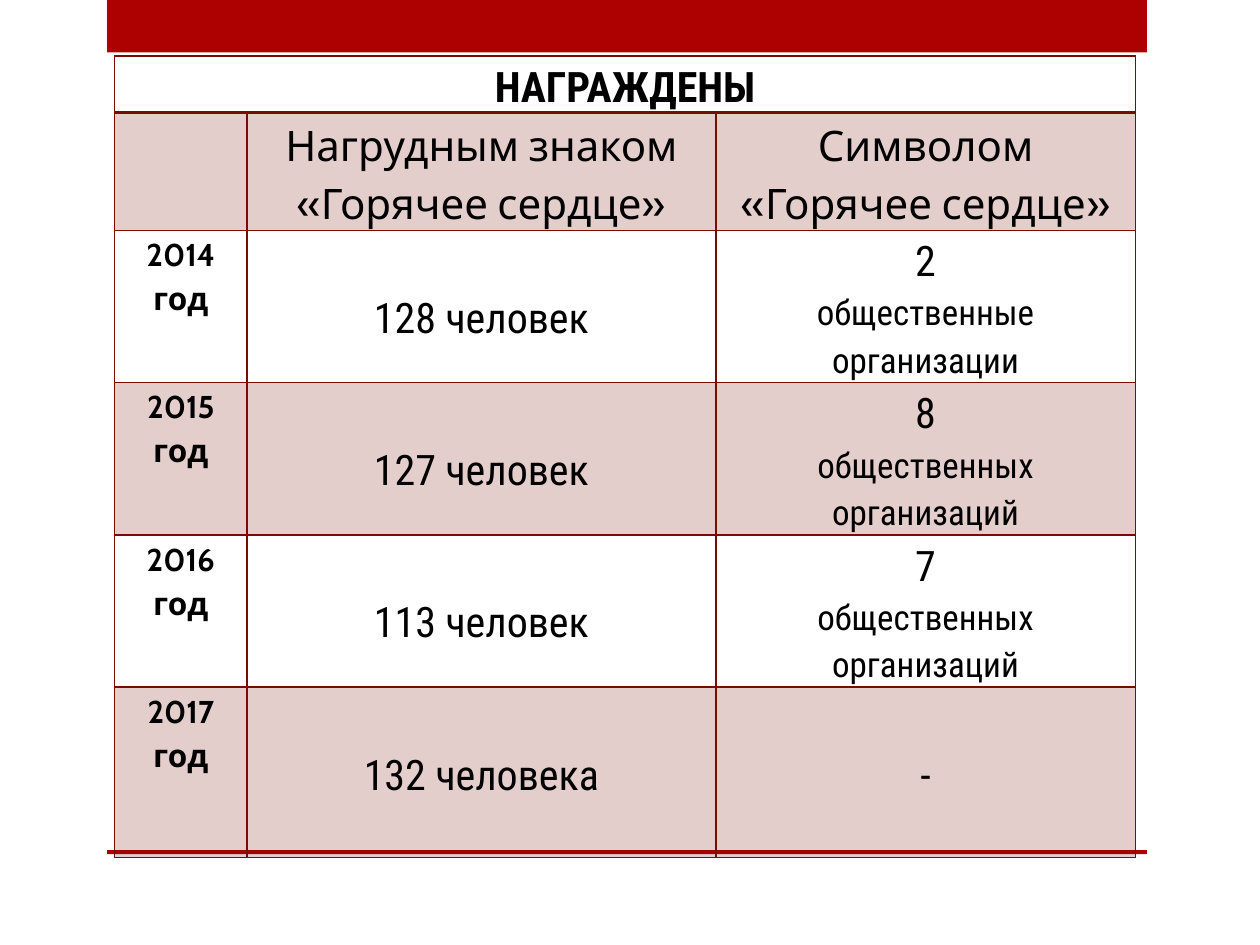
from lxml import etree
from pptx import Presentation
from pptx.dml.color import RGBColor
from pptx.enum.shapes import MSO_SHAPE
from pptx.enum.text import PP_ALIGN
from pptx.oxml.ns import qn
from pptx.util import Cm, Pt

RECTANGLE = MSO_SHAPE.RECTANGLE
CENTER = PP_ALIGN.CENTER
RED = RGBColor(0xAD, 0x01, 0x01)
MAROON = RGBColor(0x73, 0x0E, 0x00)
BLACK = RGBColor(0, 0, 0)
CONDENSED, CABIN = "Roboto Condensed", "Cabin"
LINE_DROP = Cm(1.14)  # one empty 24 pt line above the text


def style_cell(cell, shaded, top_width, bottom_width):
    """Draw the cell's borders and give it a translucent or empty fill."""
    cell_props = cell._tc.get_or_add_tcPr()
    widths = {"a:lnL": 1, "a:lnR": 1, "a:lnT": top_width, "a:lnB": bottom_width}
    for tag, width in widths.items():
        line = etree.SubElement(cell_props, qn(tag), w=str(Pt(width)))
        line_fill = etree.SubElement(line, qn("a:solidFill"))
        etree.SubElement(line_fill, qn("a:srgbClr"), val=str(MAROON))
    if shaded:
        cell.fill.solid()
        cell.fill.fore_color.rgb = MAROON
        color = cell_props.find(qn("a:solidFill")).find(qn("a:srgbClr"))
        etree.SubElement(color, qn("a:alpha"), val="20000")
    else:
        cell.fill.background()


def write_cell(cell, lines, font, sizes, bold=False, drop=0):
    """Write one centred paragraph per line, each with its own size."""
    cell.margin_left = cell.margin_right = Cm(0.15)
    cell.margin_top, cell.margin_bottom = drop, 0
    cell.text_frame.text = "\n".join(lines)
    for para, size in zip(cell.text_frame.paragraphs, sizes):
        para.alignment = CENTER
        para.line_spacing = 1.15
        for span in para.runs:
            span.font.name = font
            span.font.size = Pt(size)
            span.font.bold = bold
            span.font.color.rgb = BLACK


deck = Presentation()
deck.slide_width, deck.slide_height = Cm(25.4), Cm(19.05)
page = deck.slides.add_slide(deck.slide_layouts[6])

# Red bands at the top and bottom
for top, height in ((0, 1.06), (17.14, 0.08)):
    band = page.shapes.add_shape(RECTANGLE, Cm(2.16), Cm(top), Cm(20.96), Cm(height))
    band.shadow.inherit = False
    band.fill.solid()
    band.fill.fore_color.rgb = RED
    band.line.fill.background()

# Table grid
column_widths = (2.67, 9.45, 8.46)
row_heights = (1.1, 2.18, 3.07, 3.07, 3.07, 3.43)
frame = page.shapes.add_table(
    len(row_heights), len(column_widths), Cm(2.31), Cm(1.13),
    Cm(sum(column_widths)), Cm(sum(row_heights)))
awards = frame.table
awards.first_row = awards.horz_banding = False
for column, width in zip(awards.columns, column_widths):
    column.width = Cm(width)
for row_index, (row, height) in enumerate(zip(awards.rows, row_heights)):
    row.height = Cm(height)
    for cell in row.cells:
        style_cell(cell, shaded=row_index % 2 == 1,
                   top_width=2 if row_index == 1 else 1,
                   bottom_width=2 if row_index == 0 else 1)

# Title and column headings
awards.cell(0, 0).merge(awards.cell(0, 2))
write_cell(awards.cell(0, 0), ["НАГРАЖДЕНЫ"], CONDENSED, [24], bold=True)
for column_index, heading in enumerate(("Нагрудным знаком", "Символом"), start=1):
    write_cell(awards.cell(1, column_index), [heading, "«Горячее сердце»"], CABIN, [24, 24])

# One row per year
years = (
    ("2014 год", "128 человек", ["2", "общественные организации"]),
    ("2015 год", "127 человек", ["8", "общественных организаций"]),
    ("2016 год", "113 человек", ["7", "общественных организаций"]),
    ("2017 год", "132 человека", ["-"]),
)
for row_index, (year, people, groups) in enumerate(years, start=2):
    write_cell(awards.cell(row_index, 0), [year], CABIN, [18], bold=True)
    write_cell(awards.cell(row_index, 1), [people], CONDENSED, [24], drop=LINE_DROP)
    write_cell(awards.cell(row_index, 2), groups, CONDENSED, [24, 20],
               drop=LINE_DROP if len(groups) == 1 else 0)

deck.save("out.pptx")
